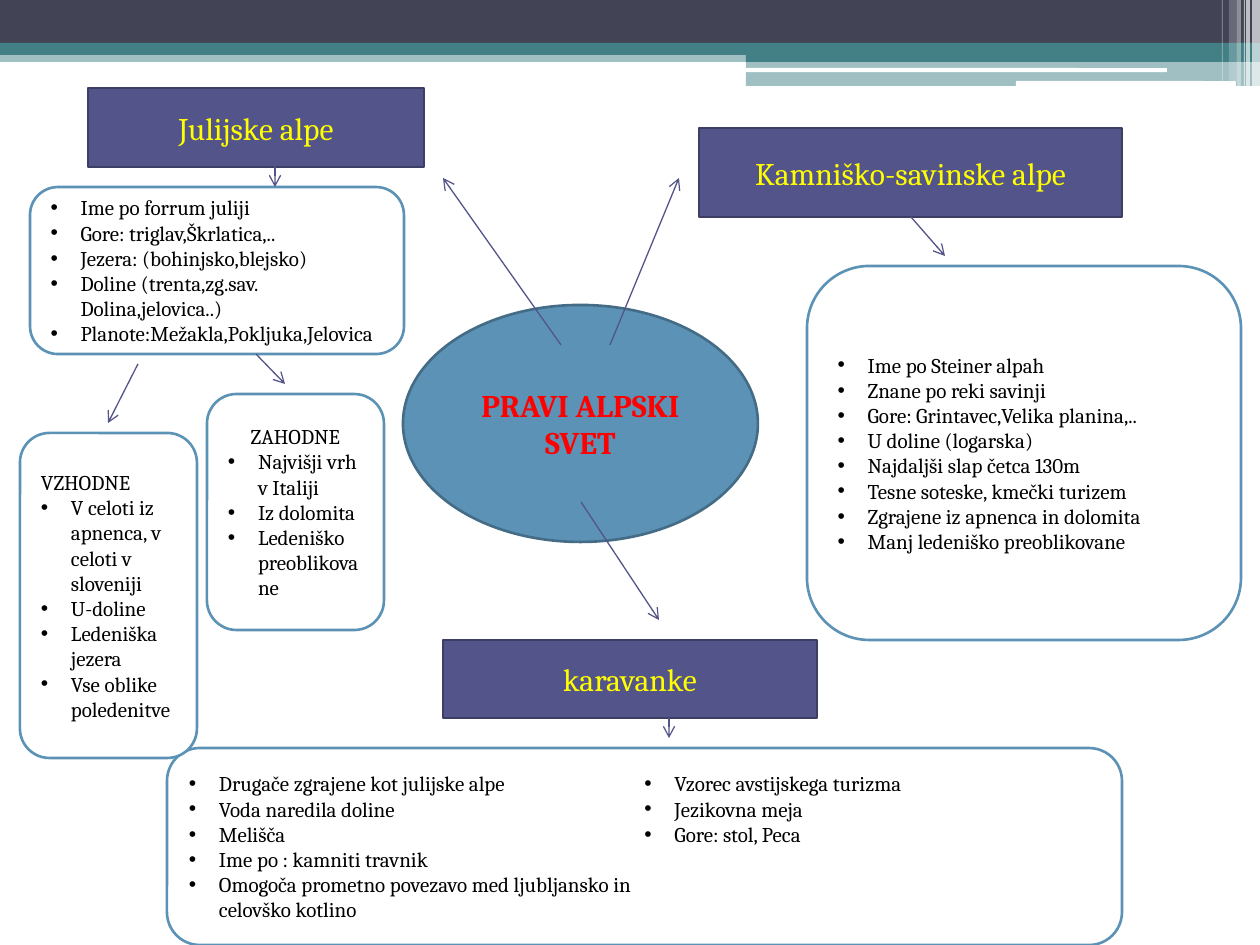
from lxml.etree import SubElement
from pptx import Presentation
from pptx.dml.color import RGBColor
from pptx.enum.shapes import MSO_CONNECTOR, MSO_SHAPE
from pptx.enum.text import MSO_ANCHOR, PP_ALIGN
from pptx.oxml.ns import qn
from pptx.util import Emu, Pt

PX_PER_INCH = 126
INDENT = 30
BLUE, BLUE_EDGE = "5C92B5", "446C86"
VIOLET, VIOLET_EDGE = "53548A", "3D3E66"
TEAL, WHITE = "438086", "FFFFFF"

# left, top, width, height, fill, opacity in percent
BANDS = [
    (0, 50, 1260, 12, TEAL, 50),
    (0, 0, 1260, 43, "424456", 100),
    (0, 43, 1260, 12, TEAL, 100),
    (746, 49, 514, 13, TEAL, 100),
    (746, 62, 514, 24, TEAL, 50),
]
PILLS = [
    (745, 68, 422, 4, WHITE, 100),
    (1016, 81, 220, 5, WHITE, 100),
]
# left, width, height, opacity in percent
STRIPES = [
    (1252, 8, 86, 65), (1246, 4, 86, 65), (1244, 1, 86, 60),
    (1237, 4, 86, 40), (1229, 8, 81, 20), (1222, 1, 81, 30),
]

CENTRE = ("PRAVI ALPSKI SVET", (403, 305, 355, 237))
RANGES = [
    ("Kamniško-savinske alpe", (699, 128, 423, 89)),
    ("karavanke", (443, 640, 374, 78)),
    ("Julijske alpe", (88, 88, 336, 79)),
]
# place, columns, heading, heading alignment, bullets
DETAILS = [
    ((807, 266, 434, 374), 1, None, None, [
        "Ime po Steiner alpah",
        "Znane po reki savinji",
        "Gore: Grintavec,Velika planina,..",
        "U doline (logarska)",
        "Najdaljši slap četca 130m",
        "Tesne soteske, kmečki turizem",
        "Zgrajene iz apnenca in dolomita",
        "Manj ledeniško preoblikovane",
    ]),
    ((167, 748, 955, 197), 2, None, None, [
        "Drugače zgrajene kot julijske alpe",
        "Voda naredila doline",
        "Melišča",
        "Ime po : kamniti travnik",
        "Omogoča prometno povezavo med ljubljansko in celovško kotlino",
        "Vzorec avstijskega turizma",
        "Jezikovna meja",
        "Gore: stol, Peca",
    ]),
    ((30, 187, 374, 167), 1, None, None, [
        "Ime po forrum juliji",
        "Gore: triglav,Škrlatica,..",
        "Jezera: (bohinjsko,blejsko)",
        "Doline (trenta,zg.sav. Dolina,jelovica..)",
        "Planote:Mežakla,Pokljuka,Jelovica",
    ]),
    ((20, 433, 177, 325), 1, "VZHODNE", PP_ALIGN.LEFT, [
        "V celoti iz apnenca, v celoti v sloveniji",
        "U-doline",
        "Ledeniška jezera",
        "Vse oblike poledenitve",
    ]),
    ((207, 394, 177, 236), 1, "ZAHODNE", PP_ALIGN.CENTER, [
        "Najvišji vrh v Italiji",
        "Iz dolomita",
        "Ledeniško preoblikovane",
    ]),
]
# start x, start y, end x, end y
CENTRE_ARROWS = [
    (610, 345, 679, 178), (581, 502, 659, 620), (561, 345, 443, 178),
]
DETAIL_ARROWS = [
    (275, 158, 275, 187), (256, 354, 285, 384), (138, 364, 108, 423),
    (911, 217, 945, 256), (669, 718, 669, 738),
]

CENTRE_FONT = {"size": Pt(18), "bold": True, "name": "Cambria"}
RANGE_FONT = {"size": Pt(18), "name": "Cambria"}
DETAIL_FONT = {"size": Pt(12), "name": "Cambria"}


def px(length):
    return Emu(round(length * 914400 / PX_PER_INCH))


def paint(color_format, hex_color):
    color_format.rgb = RGBColor.from_string(hex_color)


def add_block(slide, kind, place, fill, edge=None, opacity=100):
    block = slide.shapes.add_shape(kind, *map(px, place))
    block.shadow.inherit = False
    block.fill.solid()
    paint(block.fill.fore_color, fill)
    if opacity < 100:
        color = block.fill._xPr.find(qn("a:solidFill"))[0]
        SubElement(color, qn("a:alpha"), val=str(opacity * 1000))
    if edge:
        paint(block.line.color, edge)
        block.line.width = Pt(1.5)
    else:
        block.line.fill.background()
    return block


def write(paragraph, text, font, color, alignment):
    paragraph.alignment = alignment
    run = paragraph.add_run()
    run.text = text
    for attribute, value in font.items():
        setattr(run.font, attribute, value)
    paint(run.font.color, color)


def add_label(slide, kind, place, text, colors, font):
    fill, edge, ink = colors
    frame = add_block(slide, kind, place, fill, edge).text_frame
    frame.word_wrap = True
    frame.vertical_anchor = MSO_ANCHOR.MIDDLE
    write(frame.paragraphs[0], text, font, ink, PP_ALIGN.CENTER)


def add_bullet(paragraph):
    properties = paragraph._p.get_or_add_pPr()
    properties.set("marL", str(px(INDENT)))
    properties.set("indent", str(-px(INDENT)))
    SubElement(properties, qn("a:buFont"), typeface="Arial")
    SubElement(properties, qn("a:buChar"), char="•")


def add_details(slide, place, columns, heading, heading_alignment, bullets):
    box = add_block(slide, MSO_SHAPE.ROUNDED_RECTANGLE, place, WHITE, BLUE)
    frame = box.text_frame
    frame.word_wrap = True
    frame.vertical_anchor = MSO_ANCHOR.MIDDLE
    if columns > 1:
        frame._txBody.bodyPr.set("numCol", str(columns))
    lines = [heading] * bool(heading) + bullets
    for number, text in enumerate(lines):
        paragraph = frame.add_paragraph() if number else frame.paragraphs[0]
        is_heading = text == heading
        alignment = heading_alignment if is_heading else PP_ALIGN.LEFT
        write(paragraph, text, DETAIL_FONT, "000000", alignment)
        if not is_heading:
            add_bullet(paragraph)


def add_arrow(slide, ends):
    arrow = slide.shapes.add_connector(MSO_CONNECTOR.STRAIGHT, *map(px, ends))
    paint(arrow.line.color, VIOLET)
    arrow.line.width = Pt(0.75)
    SubElement(arrow.line._get_or_add_ln(), qn("a:tailEnd"), type="arrow")
    SubElement(arrow._element.spPr, qn("a:effectLst"))


def main():
    deck = Presentation()
    deck.slide_width, deck.slide_height = px(1260), px(945)
    slide = deck.slides.add_slide(deck.slide_layouts[6])

    for kind, bars in ((MSO_SHAPE.RECTANGLE, BANDS),
                       (MSO_SHAPE.ROUNDED_RECTANGLE, PILLS)):
        for *place, fill, opacity in bars:
            add_block(slide, kind, place, fill, opacity=opacity)
    for left, width, height, opacity in STRIPES:
        add_block(slide, MSO_SHAPE.RECTANGLE, (left, 0, width, height), WHITE,
                  opacity=opacity)

    title, place = CENTRE
    add_label(slide, MSO_SHAPE.OVAL, place, title,
              (BLUE, BLUE_EDGE, "FF0000"), CENTRE_FONT)
    for ends in CENTRE_ARROWS:
        add_arrow(slide, ends)
    for name, place in RANGES:
        add_label(slide, MSO_SHAPE.RECTANGLE, place, name,
                  (VIOLET, VIOLET_EDGE, "FFFF00"), RANGE_FONT)
    for details in DETAILS:
        add_details(slide, *details)
    for ends in DETAIL_ARROWS:
        add_arrow(slide, ends)

    deck.save("out.pptx")


if __name__ == "__main__":
    main()
